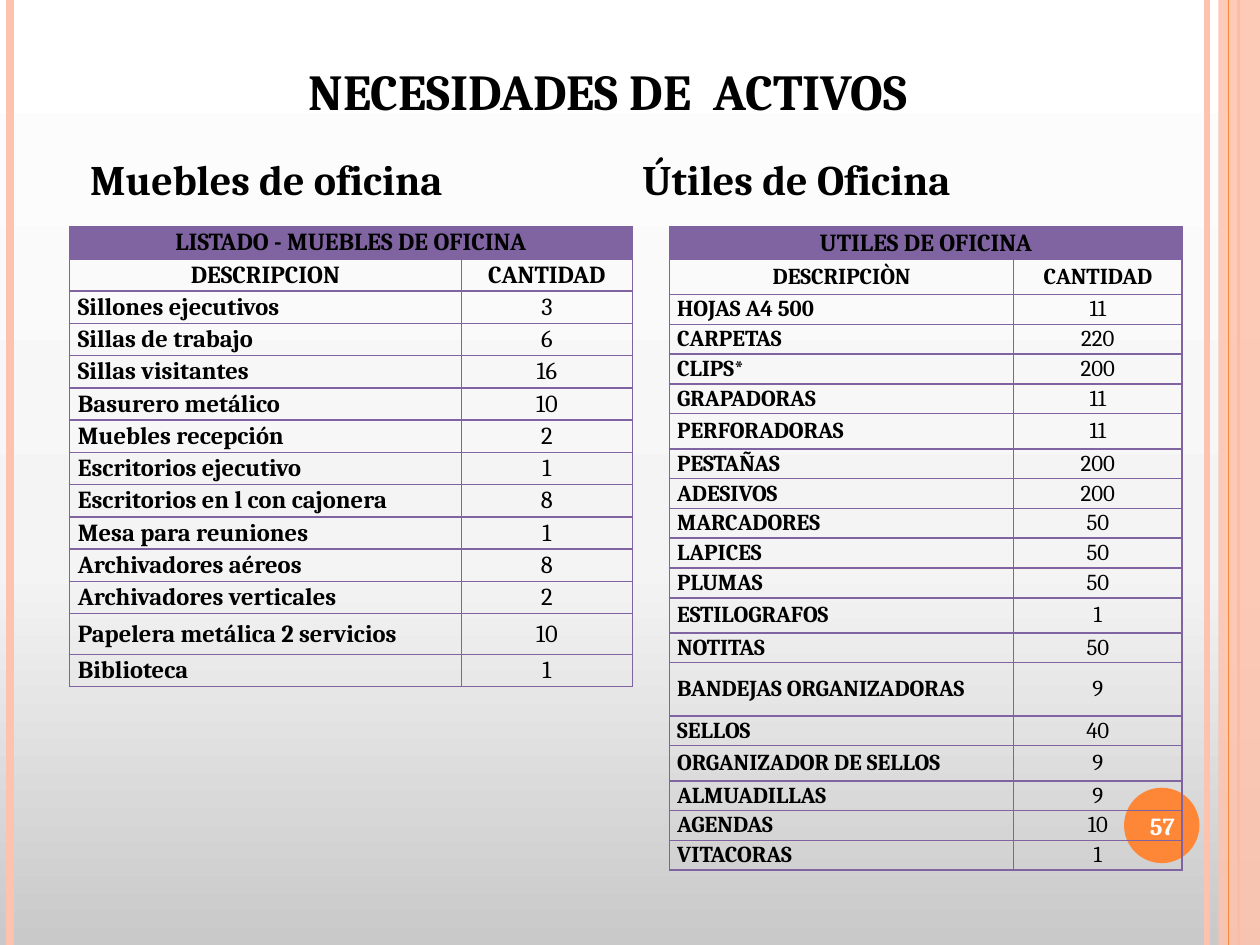
"""Build the slide listing office furniture and office supplies."""
from copy import deepcopy

from lxml.etree import SubElement
from pptx import Presentation
from pptx.dml.color import RGBColor
from pptx.enum.shapes import MSO_CONNECTOR, MSO_SHAPE
from pptx.enum.text import MSO_ANCHOR, PP_ALIGN
from pptx.oxml import parse_xml
from pptx.oxml.ns import nsdecls, qn
from pptx.util import Cm, Pt

BLACK, WHITE, PURPLE, ORANGE, PEACH = "000000", "FFFFFF", "8064A2", "FE8637", "FEC3AE"


def rgb(value):
    return RGBColor.from_string(value)


def write(frame, text, size, alignment, color=BLACK, bold=True):
    paragraph = frame.paragraphs[0]
    paragraph.alignment = alignment
    run = paragraph.add_run()
    run.text = text
    run.font.name = "Cambria"
    run.font.size = Pt(size)
    run.font.bold = bold
    run.font.color.rgb = rgb(color)
    return paragraph


presentation = Presentation()
presentation.slide_width, presentation.slide_height = Cm(25.4), Cm(19.05)
slide = presentation.slides.add_slide(presentation.slide_layouts[6])
shapes = slide.shapes

background = slide.background.fill
background.gradient()
background.gradient_angle = 90
first_stop = next(slide.element.iter(qn("a:gs")))
first_stop.addnext(deepcopy(first_stop))
gradient = [(0, "C9C9C9"), (0.4, "F4F4F4"), (1, WHITE)]
for stop, (position, color) in zip(background.gradient_stops, gradient):
    stop.position = position
    stop.color.rgb = rgb(color)

stripes = [(24.33, PEACH, 3), (0.2, PEACH, 4.5), (24.97, ORANGE, 1.5), (24.77, ORANGE, 0.75)]
for left, color, width in stripes:
    if left == 24.77:
        band = shapes.add_shape(MSO_SHAPE.RECTANGLE, Cm(24.56), 0, Cm(0.84), Cm(19.05))
        band.shadow.inherit = False
        band.fill.solid()
        band.fill.fore_color.rgb = rgb(PEACH)
        band.line.fill.background()
        SubElement(next(band.element.iter(qn("a:srgbClr"))), qn("a:alpha"), val="87000")
    stripe = shapes.add_connector(MSO_CONNECTOR.STRAIGHT, Cm(left), 0, Cm(left), Cm(19.05))
    stripe.line.color.rgb = rgb(color)
    stripe.line.width = Pt(width)
    SubElement(stripe.element.spPr, qn("a:effectLst"))

badge = shapes.add_shape(MSO_SHAPE.OVAL, Cm(22.66), Cm(15.88), Cm(1.52), Cm(1.52))
badge.shadow.inherit = False
badge.fill.solid()
badge.fill.fore_color.rgb = rgb(ORANGE)
badge.line.fill.background()

texts = [
    ("NECESIDADES DE  ACTIVOS", 28.8, PP_ALIGN.CENTER, BLACK, MSO_ANCHOR.BOTTOM,
     (2.77, 0.99, 18.97, 1.57)),
    ("Muebles de oficina\tÚtiles de Oficina", 24, PP_ALIGN.LEFT, BLACK, MSO_ANCHOR.TOP,
     (1.57, 2.97, 20.75, 1.4)),
    ("57", 14, PP_ALIGN.CENTER, WHITE, MSO_ANCHOR.MIDDLE, (22.58, 15.93, 1.7, 1.45)),
]
for text, size, alignment, color, anchor, box in texts:
    frame = shapes.add_textbox(*map(Cm, box)).text_frame
    frame.word_wrap = True
    frame.vertical_anchor = anchor
    paragraph = write(frame, text, size, alignment, color)
    if "\t" in text:
        tabs = SubElement(paragraph._p.get_or_add_pPr(), qn("a:tabLst"))
        SubElement(tabs, qn("a:tab"), pos=str(Cm(11.13)), algn="l")

furniture = [
    ("LISTADO - MUEBLES DE OFICINA", ""), ("DESCRIPCION", "CANTIDAD"),
    ("Sillones ejecutivos", "3"), ("Sillas de trabajo", "6"), ("Sillas visitantes", "16"),
    ("Basurero metálico", "10"), ("Muebles recepción", "2"), ("Escritorios ejecutivo", "1"),
    ("Escritorios en l con cajonera", "8"), ("Mesa para reuniones", "1"),
    ("Archivadores aéreos", "8"), ("Archivadores verticales", "2"),
    ("Papelera metálica 2 servicios", "10"), ("Biblioteca", "1"),
]
supplies = [
    ("UTILES DE OFICINA", ""), ("DESCRIPCIÒN", "CANTIDAD"),
    ("HOJAS A4 500", "11"), ("CARPETAS", "220"), ("CLIPS*", "200"), ("GRAPADORAS", "11"),
    ("PERFORADORAS", "11"), ("PESTAÑAS", "200"), ("ADESIVOS", "200"), ("MARCADORES", "50"),
    ("LAPICES", "50"), ("PLUMAS", "50"), ("ESTILOGRAFOS", "1"), ("NOTITAS", "50"),
    ("BANDEJAS ORGANIZADORAS", "9"), ("SELLOS", "40"), ("ORGANIZADOR DE SELLOS", "9"),
    ("ALMUADILLAS", "9"), ("AGENDAS", "10"), ("VITACORAS", "1"),
]
tables = [
    (furniture, 1.4, (7.9, 3.45), 14, 0.65, 0.17, {12: 0.82}),
    (supplies, 13.5, (6.93, 3.4), 13, 0.6, 0.15,
     {0: 0.66, 1: 0.71, 6: 0.71, 12: 0.71, 14: 1.07, 16: 0.71}),
]
for rows, left, widths, size, height, margin, tall_rows in tables:
    heights = [tall_rows.get(index, height) for index in range(len(rows))]
    table = shapes.add_table(len(rows), 2, Cm(left), Cm(4.57),
                             Cm(sum(widths)), Cm(sum(heights))).table
    table.first_row = table.horz_banding = False
    for column, width in zip(table.columns, widths):
        column.width = Cm(width)
    table.cell(0, 0).merge(table.cell(0, 1))
    for row_index, values in enumerate(rows):
        table.rows[row_index].height = Cm(heights[row_index])
        for column_index, value in enumerate(values):
            cell = table.cell(row_index, column_index)
            cell.vertical_anchor = MSO_ANCHOR.MIDDLE
            cell.margin_left = cell.margin_right = Cm(margin)
            cell.margin_top = cell.margin_bottom = 0
            if row_index == 0:
                cell.fill.solid()
                cell.fill.fore_color.rgb = rgb(PURPLE)
            else:
                cell.fill.background()
            for position, side in enumerate(("lnL", "lnR", "lnT", "lnB")):
                cell._tc.get_or_add_tcPr().insert(position, parse_xml(
                    f'<a:{side} {nsdecls("a")} w="{Pt(1)}"><a:solidFill>'
                    f'<a:srgbClr val="{PURPLE}"/></a:solidFill></a:{side}>'))
            if value:
                is_name = row_index > 1 and column_index == 0
                paragraph = write(cell.text_frame, value, 14 if row_index == 0 else size,
                                  PP_ALIGN.LEFT if is_name else PP_ALIGN.CENTER,
                                  bold=row_index < 2 or is_name)
                paragraph.line_spacing = 0.95

presentation.save("out.pptx")
